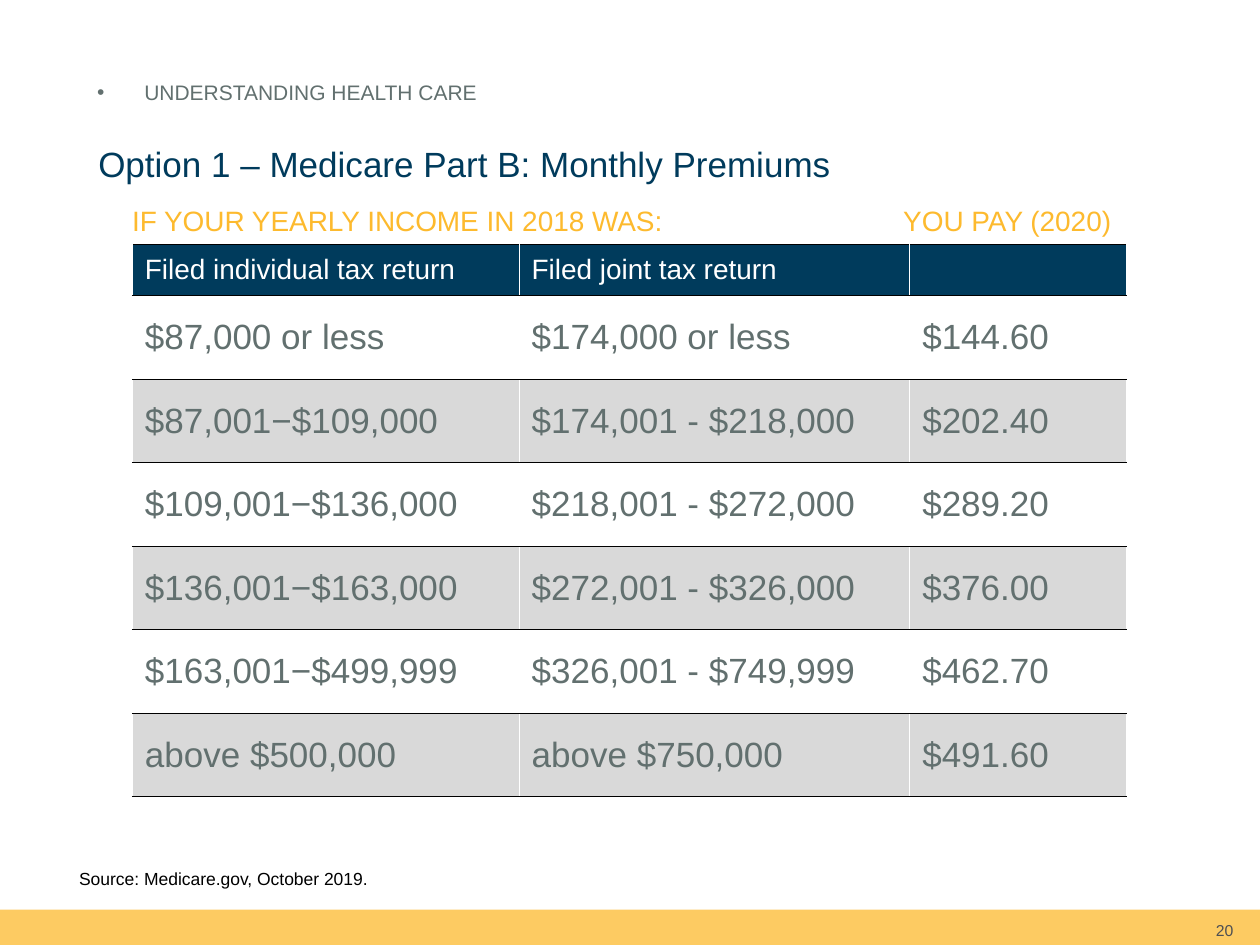
from lxml import etree
from pptx import Presentation
from pptx import util as u
from pptx.dml.color import RGBColor
from pptx.enum import shapes, text
from pptx.oxml import ns

NAVY = RGBColor(0x00, 0x3B, 0x5C)
GOLD = RGBColor(0xFD, 0xBA, 0x2E)
SLATE = RGBColor(0x62, 0x70, 0x6F)
CHARCOAL = RGBColor(0x4D, 0x4F, 0x53)
BAND = RGBColor(0xD9, 0xD9, 0xD9)
WHITE = RGBColor(0xFF, 0xFF, 0xFF)
BLACK = RGBColor(0x00, 0x00, 0x00)

presentation = Presentation()
presentation.slide_width = u.Inches(10)
presentation.slide_height = u.Inches(7.5)
column = presentation.slide_width / 100
row = presentation.slide_height / 75
slide = presentation.slides.add_slide(presentation.slide_layouts[1])


def write(text_frame, wording, size, color, align=text.PP_ALIGN.LEFT):
    text_frame.text = wording
    paragraph = text_frame.paragraphs[0]
    paragraph.alignment = align
    paragraph.space_before = u.Pt(0)
    for run in paragraph.runs:
        run.font.name = "Arial"
        run.font.size = u.Pt(size)
        run.font.bold = False
        run.font.color.rgb = color


def place(shape, left, top, width, height, anchor):
    shape.left, shape.width = int(left * column), int(width * column)
    shape.top, shape.height = int(top * row), int(height * row)
    shape.text_frame.word_wrap = True
    shape.text_frame.auto_size = text.MSO_AUTO_SIZE.NONE
    shape.text_frame.vertical_anchor = anchor


top_anchor, middle, bottom = text.MSO_ANCHOR.TOP, text.MSO_ANCHOR.MIDDLE, text.MSO_ANCHOR.BOTTOM

footer_bar = slide.shapes.add_shape(shapes.MSO_SHAPE.RECTANGLE, 0, 0, 0, 0)
place(footer_bar, 0, 72.2, 100, 2.8, middle)
footer_bar.shadow.inherit = False
footer_bar.line.fill.background()
footer_bar.fill.solid()
footer_bar.fill.fore_color.rgb = GOLD
bar_color = footer_bar._element.spPr.find(".//" + ns.qn("a:srgbClr"))
etree.SubElement(bar_color, ns.qn("a:alpha"), val="75000")

title = slide.shapes.title
place(title, 6.8, 10.8, 86.6, 7.8, top_anchor)
write(title.text_frame, "Option 1 – Medicare Part B: Monthly Premiums", 20, NAVY)

section = slide.placeholders[1]
place(section, 6.7, 2.5, 86.6, 5.8, bottom)
section.text_frame.margin_bottom = 0
section_properties = section.text_frame.paragraphs[0]._p.get_or_add_pPr()
section_properties.set("marL", "0")
section_properties.set("indent", "0")
etree.SubElement(section_properties, ns.qn("a:buNone"))
write(section.text_frame, "UNDERSTANDING HEALTH CARE", 12, SLATE)

labels = [
    ("Source: Medicare.gov, October 2019.", 5.3, 68.4, 94.7, 2.7, 10, BLACK),
    ("IF YOUR YEARLY INCOME IN 2018 WAS:", 9.5, 15.7, 49.1, 3.7, 16, GOLD),
    ("YOU PAY (2020)", 70.7, 15.7, 20.1, 3.7, 16, GOLD),
]
for wording, left, top, width, height, size, color in labels:
    label = slide.shapes.add_textbox(0, 0, 0, 0)
    place(label, left, top, width, height, top_anchor)
    write(label.text_frame, wording, size, color)

page_number = slide.shapes.add_textbox(0, 0, 0, 0)
place(page_number, 74.6, 72.2, 23.3, 2.8, middle)
page_number.text_frame.margin_right = page_number.text_frame.margin_bottom = 0
write(page_number.text_frame, "20", 9, CHARCOAL, text.PP_ALIGN.RIGHT)

premiums = [
    ("Filed individual tax return", "Filed joint tax return", ""),
    ("$87,000 or less", "$174,000 or less", "$144.60"),
    ("$87,001−$109,000", "$174,001 - $218,000", "$202.40"),
    ("$109,001−$136,000", "$218,001 - $272,000", "$289.20"),
    ("$136,001−$163,000", "$272,001 - $326,000", "$376.00"),
    ("$163,001−$499,999", "$326,001 - $749,999", "$462.70"),
    ("above $500,000", "above $750,000", "$491.60"),
]
column_widths = [30.7, 31, 17.2]
row_heights = [4] + [6.63] * 6
table = slide.shapes.add_table(
    len(premiums), len(column_widths), int(10.5 * column), int(19.4 * row),
    int(sum(column_widths) * column), int(sum(row_heights) * row)).table
table.first_row = table.horz_banding = False
for table_column, width in zip(table.columns, column_widths):
    table_column.width = int(width * column)
for table_row, height in zip(table.rows, row_heights):
    table_row.height = int(height * row)

borders = [("a:lnL", WHITE), ("a:lnR", WHITE), ("a:lnT", BLACK), ("a:lnB", BLACK)]
for row_index, wordings in enumerate(premiums):
    is_header = row_index == 0
    size, color = (16, WHITE) if is_header else (20, SLATE)
    fill = NAVY if is_header else (WHITE if row_index % 2 else BAND)
    for column_index, wording in enumerate(wordings):
        cell = table.cell(row_index, column_index)
        cell.vertical_anchor = middle
        cell.fill.solid()
        cell.fill.fore_color.rgb = fill
        write(cell.text_frame, wording, size, color)
        for position, (tag, border_color) in enumerate(borders):
            line = etree.Element(ns.qn(tag), w=str(u.Pt(0.5)))
            line_fill = etree.SubElement(line, ns.qn("a:solidFill"))
            etree.SubElement(line_fill, ns.qn("a:srgbClr"), val=str(border_color))
            cell._tc.get_or_add_tcPr().insert(position, line)

presentation.save("out.pptx")
